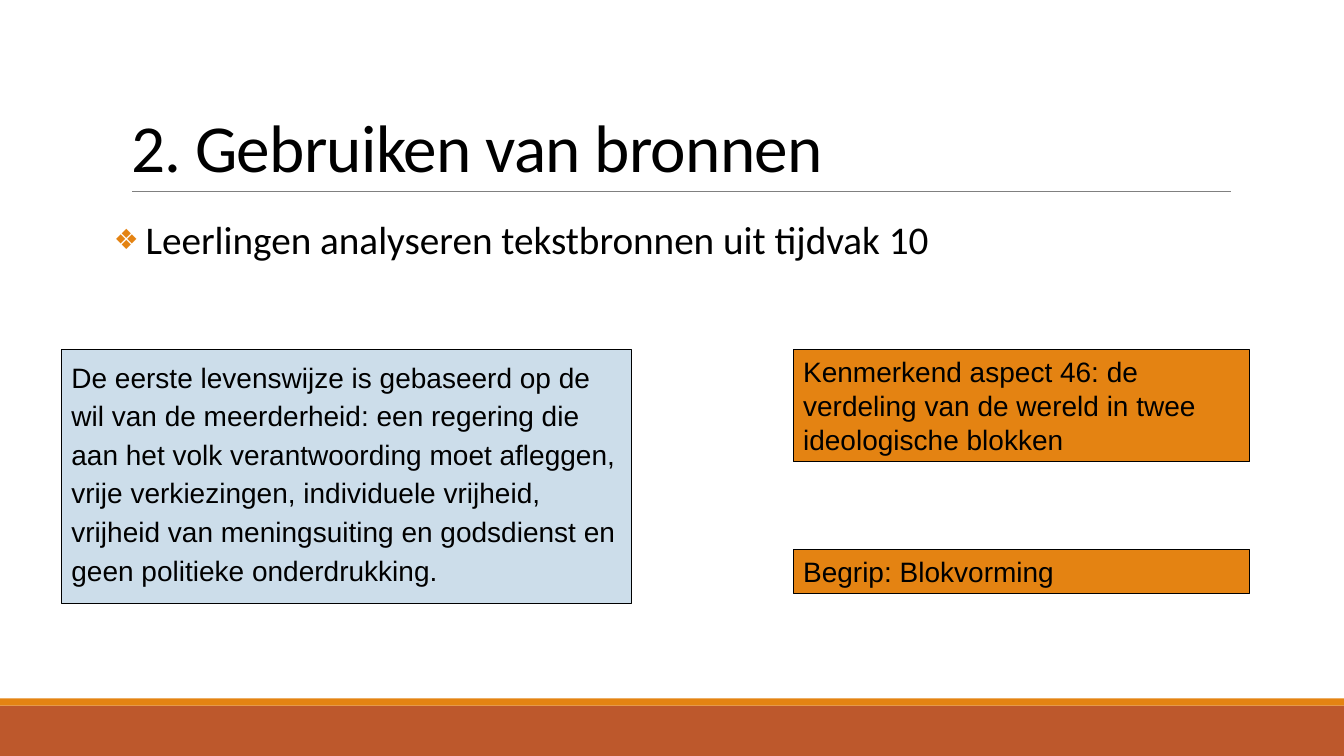
from lxml import etree
from pptx import Presentation
from pptx import util as u
from pptx.dml.color import RGBColor
from pptx.enum import shapes, text
from pptx.oxml.ns import qn

COLORS = {"black": "000000", "rule": "808080", "orange": "E48312",
          "rust": "BD582C", "blue": "CCDDEA"}


def rgb(name):
    return RGBColor.from_string(COLORS[name])


def write(sp, content, size=20, font="Arial", spacing=1.0, before=0, after=0,
          anchor=text.MSO_ANCHOR.TOP):
    """Fill a shape with one left-aligned paragraph; return paragraph and run."""
    tf = sp.text_frame
    tf.word_wrap = True
    tf.auto_size = text.MSO_AUTO_SIZE.NONE
    tf.vertical_anchor = anchor
    p = tf.paragraphs[0]
    p.alignment = text.PP_ALIGN.LEFT
    p.line_spacing = spacing
    p.space_before, p.space_after = u.Pt(before), u.Pt(after)
    r = p.add_run()
    r.text = content
    r.font.size = u.Pt(size)
    r.font.name = font
    r.font.color.rgb = rgb("black")
    return p, r


prs = Presentation()
prs.slide_width, prs.slide_height = u.Cm(33.87), u.Cm(19.05)
s = prs.slides.add_slide(prs.slide_layouts[1])

# Title
title = s.shapes.title
title.left, title.top, title.width, title.height = map(u.Cm, (3.05, 0.79, 27.94, 4.04))
p, r = write(title, "2. Gebruiken van bronnen", size=48, font="Calibri",
             spacing=0.85, anchor=text.MSO_ANCHOR.BOTTOM)
r.font._element.set("spc", "-50")

# Bulleted body
body = s.placeholders[1]
body.left, body.top, body.width, body.height = map(u.Cm, (2.87, 5.44, 29.21, 12.09))
body.text_frame.margin_left = body.text_frame.margin_right = 0
p, r = write(body, "Leerlingen analyseren tekstbronnen uit tijdvak 10", size=28,
             font="Calibri", spacing=0.9, before=12, after=2)
pPr = p._p.get_or_add_pPr()
pPr.set("marL", str(u.Cm(0.8)))
pPr.set("indent", str(-u.Cm(0.8)))
bullet_color = etree.SubElement(pPr, qn("a:buClr"))
etree.SubElement(bullet_color, qn("a:srgbClr"), val=COLORS["orange"])
etree.SubElement(pPr, qn("a:buSzPct"), val="71000")
etree.SubElement(pPr, qn("a:buChar"), char="❖")

# Rule under the title
rule = s.shapes.add_connector(shapes.MSO_CONNECTOR.STRAIGHT, u.Cm(3.33), u.Cm(4.83),
                              u.Cm(31.01), u.Cm(4.83))
rule.line.color.rgb = rgb("rule")
rule.line.width = u.Pt(0.5)
etree.SubElement(rule._element.spPr, qn("a:effectLst"))

# Footer bars and text boxes: left, top, width, height, fill, text, line spacing
BLOCKS = [
    (0, 17.78, 33.87, 1.27, "rust", None, None),
    (0, 17.6, 33.87, 0.18, "orange", None, None),
    (1.55, 8.82, 14.36, 6.4, "blue",
     "De eerste levenswijze is gebaseerd op de wil van de meerderheid: een regering "
     "die aan het volk verantwoording moet afleggen, vrije verkiezingen, individuele "
     "vrijheid, vrijheid van meningsuiting en godsdienst en geen politieke "
     "onderdrukking.", 1.15),
    (19.99, 8.82, 11.51, 2.82, "orange",
     "Kenmerkend aspect 46: de verdeling van de wereld in twee ideologische blokken", 1.0),
    (19.99, 13.84, 11.51, 1.12, "orange", "Begrip: Blokvorming", 1.0),
]
for left, top, width, height, fill, content, spacing in BLOCKS:
    sp = s.shapes.add_shape(shapes.MSO_SHAPE.RECTANGLE, u.Cm(left), u.Cm(top),
                            u.Cm(width), u.Cm(height))
    sp.shadow.inherit = False
    sp.fill.solid()
    sp.fill.fore_color.rgb = rgb(fill)
    if content:
        sp.line.color.rgb = rgb("black")
        sp.line.width = u.Pt(0.75)
        write(sp, content, spacing=spacing)
    else:
        sp.line.fill.background()

prs.save("out.pptx")
